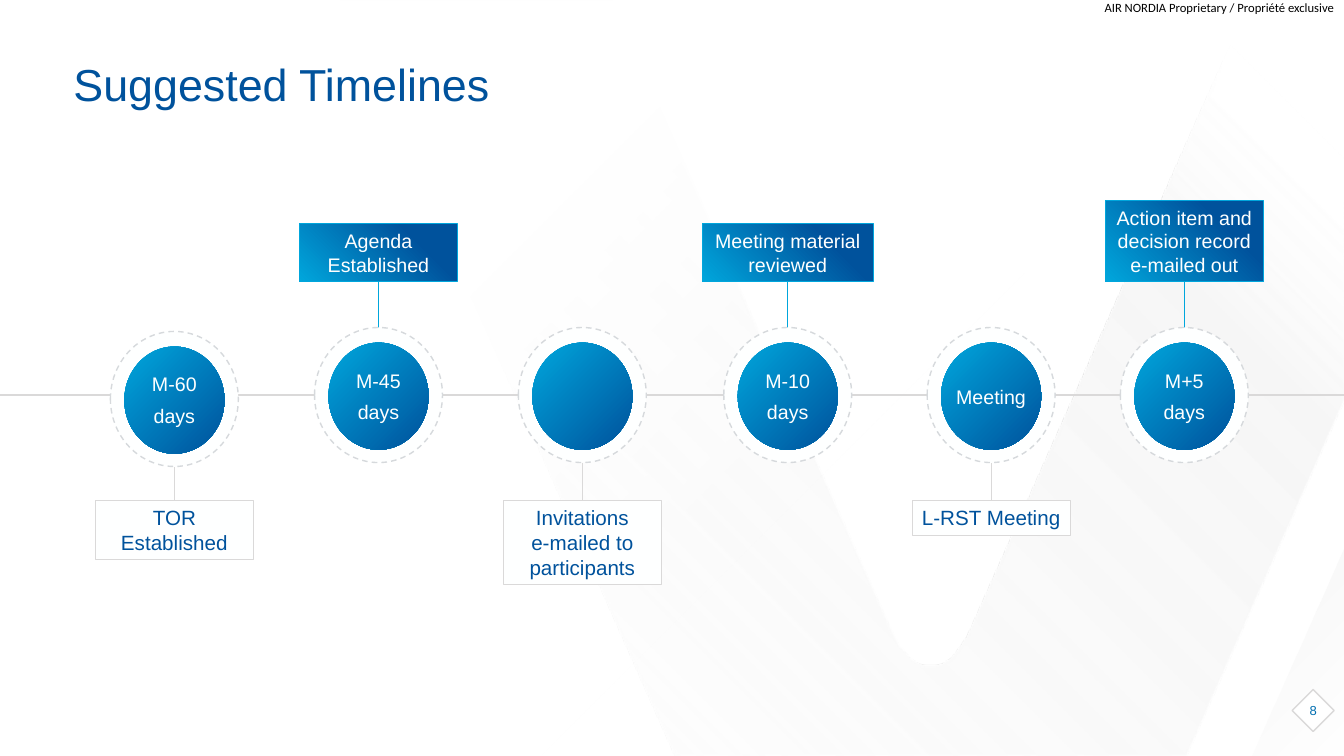
from lxml.etree import SubElement
from pptx import Presentation
from pptx.dml.color import RGBColor
from pptx.enum.dml import MSO_LINE
from pptx.enum.shapes import MSO_CONNECTOR, MSO_SHAPE
from pptx.enum.text import MSO_ANCHOR, PP_ALIGN
from pptx.oxml.ns import qn
from pptx.util import Pt

W, H = 960, 540
AXIS_Y = 282.2
RING_W, RING_H = 91.4, 96.5
COLORS = {
    "navy": "00529C", "cyan": "00A6DC", "page": "006EB0", "white": "FFFFFF",
    "offwhite": "FEFFFF", "rule": "DAD9D9", "dash": "D6D9DC", "mist": "F2F2F2",
    "black": "000000",
}
# centre x, ring centre y, circle lines, callout text, side, callout width and height
MILESTONES = [
    (124.6, 285, ["M-60", "days"], "TOR Established", "below", 113, 42.5),
    (270.4, AXIS_Y, ["M-45", "days"], "Agenda Established", "above", 113, 41),
    (416, AXIS_Y, [], "Invitations\ve-mailed to participants", "below", 113, 60.5),
    (562.7, AXIS_Y, ["M-10", "days"], "Meeting material reviewed", "above", 122.4, 41),
    (708, AXIS_Y, ["Meeting"], "L-RST Meeting", "below", 113, 25.2),
    (846, AXIS_Y, ["M+5", "days"], "Action item and decision record e-mailed out",
     "above", 113, 58),
]
# site is the callout side the leader leaves from, toward the sign of its ring edge
SIDES = {
    "above": dict(edge=201, site=2, ring_edge=-1, line="cyan",
                  size=14, color="offwhite", anchor=MSO_ANCHOR.BOTTOM),
    "below": dict(edge=357.4, site=0, ring_edge=1, line="rule",
                  size=14.7, color="navy", anchor=MSO_ANCHOR.TOP),
}


def rgb(name):
    return RGBColor.from_string(COLORS[name])


def set_gradient(sp, stops, angle=None, focus=None):
    """Fill with (position, colour, opacity) stops, linear or around a focus (l, t, r, b)."""
    sp.fill.gradient()
    grad = sp._element.spPr.find(qn("a:gradFill"))
    for child in list(grad):
        grad.remove(child)
    gs_list = SubElement(grad, qn("a:gsLst"))
    for pos, color, opacity in stops:
        gs = SubElement(gs_list, qn("a:gs"), pos=str(pos * 1000))
        clr = SubElement(gs, qn("a:srgbClr"), val=COLORS[color])
        if opacity < 100:
            SubElement(clr, qn("a:alpha"), val=str(opacity * 1000))
    if focus:
        radial = SubElement(grad, qn("a:path"))
        radial.set("path", "circle")
        SubElement(radial, qn("a:fillToRect"),
                   {side: str(v * 1000) for side, v in zip("ltrb", focus)})
    else:
        SubElement(grad, qn("a:lin"), ang=str(angle * 60000), scaled="0")


def style(sp, fill=None, line=None, width=0.75):
    sp.shadow.inherit = False
    if fill:
        sp.fill.solid()
        sp.fill.fore_color.rgb = rgb(fill)
    if line:
        sp.line.color.rgb = rgb(line)
        sp.line.width = Pt(width)
    else:
        sp.line.fill.background()


def add_shape(slide, kind, x, y, w, h, **look):
    sp = slide.shapes.add_shape(kind, Pt(x), Pt(y), Pt(w), Pt(h))
    style(sp, **look)
    return sp


def add_line(slide, x1, y1, x2, y2, color, width):
    line = slide.shapes.add_connector(MSO_CONNECTOR.STRAIGHT, Pt(x1), Pt(y1), Pt(x2), Pt(y2))
    line.line.color.rgb = rgb(color)
    line.line.width = Pt(width)
    SubElement(line._element.spPr, qn("a:effectLst"))
    return line


def write(sp, lines, size, color, font="Arial", align=PP_ALIGN.CENTER, para=None, **frame):
    tf = sp.text_frame
    for name, value in ({"word_wrap": True} | frame).items():
        setattr(tf, name, value)
    for i, line in enumerate(lines):
        p = tf.paragraphs[0] if i == 0 else tf.add_paragraph()
        p.text = line
        for name, value in ({"alignment": align} | (para or {})).items():
            setattr(p, name, value)
        for name, value in {"name": font, "size": Pt(size)}.items():
            setattr(p.font, name, value)
        p.font.color.rgb = rgb(color)


def margins(x, y):
    return dict(margin_left=Pt(x), margin_right=Pt(x), margin_top=Pt(y), margin_bottom=Pt(y))


def add_outline(slide, points):
    builder = slide.shapes.build_freeform(*points[0], scale=Pt(1))
    builder.add_line_segments(points[1:], close=True)
    sp = builder.convert_to_shape()
    style(sp)
    return sp


def bezier(p0, p1, p2, p3, steps=16):
    ts = [i / steps for i in range(steps + 1)]
    return [tuple(round((1 - t) ** 3 * a + 3 * (1 - t) ** 2 * t * b
                        + 3 * (1 - t) * t * t * c + t ** 3 * d, 2)
                  for a, b, c, d in zip(p0, p1, p2, p3)) for t in ts]


def add_backdrop(slide):
    """Pale folded band behind the timeline."""
    valley = bezier((635.8, 450), (651.6, 485.3), (677.5, 485.3), (692.6, 450))
    band = add_outline(slide, [(242.6, 0), (436.3, 0), *valley, (892.8, 0), (W, 0),
                               (W, 285.1), (846.7, H), (482.4, H)])
    set_gradient(band, [(4, "mist", 0), (75, "mist", 63), (91, "white", 0)],
                 focus=(0, 100, 100, 0))
    veil = add_shape(slide, MSO_SHAPE.RECTANGLE, 0, 0, 731.5, H)
    set_gradient(veil, [(43, "white", 100), (73, "white", 0)], angle=45)
    corner = add_outline(slide, [(W, 391.7), (894.2, H), (W, H)])
    set_gradient(corner, [(0, "mist", 0), (100, "mist", 63)], focus=(100, 100, 0, 0))


def add_text(slide, x, y, w, h, text, size, color, **fmt):
    tb = slide.shapes.add_textbox(Pt(x), Pt(y), Pt(w), Pt(h))
    write(tb, [text], size, color, align=PP_ALIGN.LEFT, **fmt)


def add_page_number(slide, x, y, side, number):
    sp = add_shape(slide, MSO_SHAPE.DIAMOND, x, y, side, side,
                   fill="white", line="rule", width=1)
    write(sp, [number], 9.3, "page", word_wrap=False, vertical_anchor=MSO_ANCHOR.MIDDLE)


def add_callout(slide, cx, cy, text, side, w, h):
    """Boxed label with a leader to the edge of the ring centred on (cx, cy)."""
    look = SIDES[side]
    top = look["edge"] - h if side == "above" else look["edge"]
    sp = add_shape(slide, MSO_SHAPE.RECTANGLE, cx - w / 2, top, w, h,
                   fill="offwhite", line=look["line"])
    if side == "above":
        set_gradient(sp, [(26, "navy", 100), (100, "cyan", 100)], angle=135)
    write(sp, [text], look["size"], look["color"],
          vertical_anchor=look["anchor"], **margins(5, 3.6))
    ring_y = cy + look["ring_edge"] * RING_H / 2
    leader = add_line(slide, cx, look["edge"], cx, ring_y, look["line"], 0.75)
    leader.begin_connect(sp, look["site"])


def add_milestone(slide, cx, cy, lines):
    """Dashed ring with a filled disc centred on (cx, cy)."""
    def oval(y, w, h, **look):
        return add_shape(slide, MSO_SHAPE.OVAL, cx - w / 2, y - h / 2, w, h, **look)

    ring = oval(cy, RING_W, RING_H, fill="offwhite", line="dash", width=1)
    ring.line.dash_style = MSO_LINE.DASH
    disc = oval(cy + 0.8, 71.5, 76.5)
    set_gradient(disc, [(0, "cyan", 100), (100, "navy", 100)], angle=45)
    write(disc, lines, 14, "offwhite", para={"space_before": Pt(6)}, word_wrap=False,
          vertical_anchor=MSO_ANCHOR.MIDDLE, **margins(3.6, 3.6))


def add_timeline_slide(prs):
    slide = prs.slides.add_slide(prs.slide_layouts[6])
    add_backdrop(slide)
    add_text(slide, 789, 0, 171, 11, "AIR NORDIA Proprietary / Propriété exclusive",
             9, "black", font="Calibri", **margins(0, 0) | {"word_wrap": False})
    add_text(slide, 45.4, 43, 846.7, 38.2, "Suggested Timelines", 32, "navy",
             para={"line_spacing": 0.9}, vertical_anchor=MSO_ANCHOR.MIDDLE)
    add_page_number(slide, 923, 492.5, 30, "8")
    add_line(slide, 0, AXIS_Y, W, AXIS_Y, "rule", 1)
    for cx, cy, lines, *callout in MILESTONES:
        add_callout(slide, cx, cy, *callout)
        add_milestone(slide, cx, cy, lines)


def main():
    prs = Presentation()
    prs.slide_width, prs.slide_height = Pt(W), Pt(H)
    add_timeline_slide(prs)
    prs.save("out.pptx")


if __name__ == "__main__":
    main()
